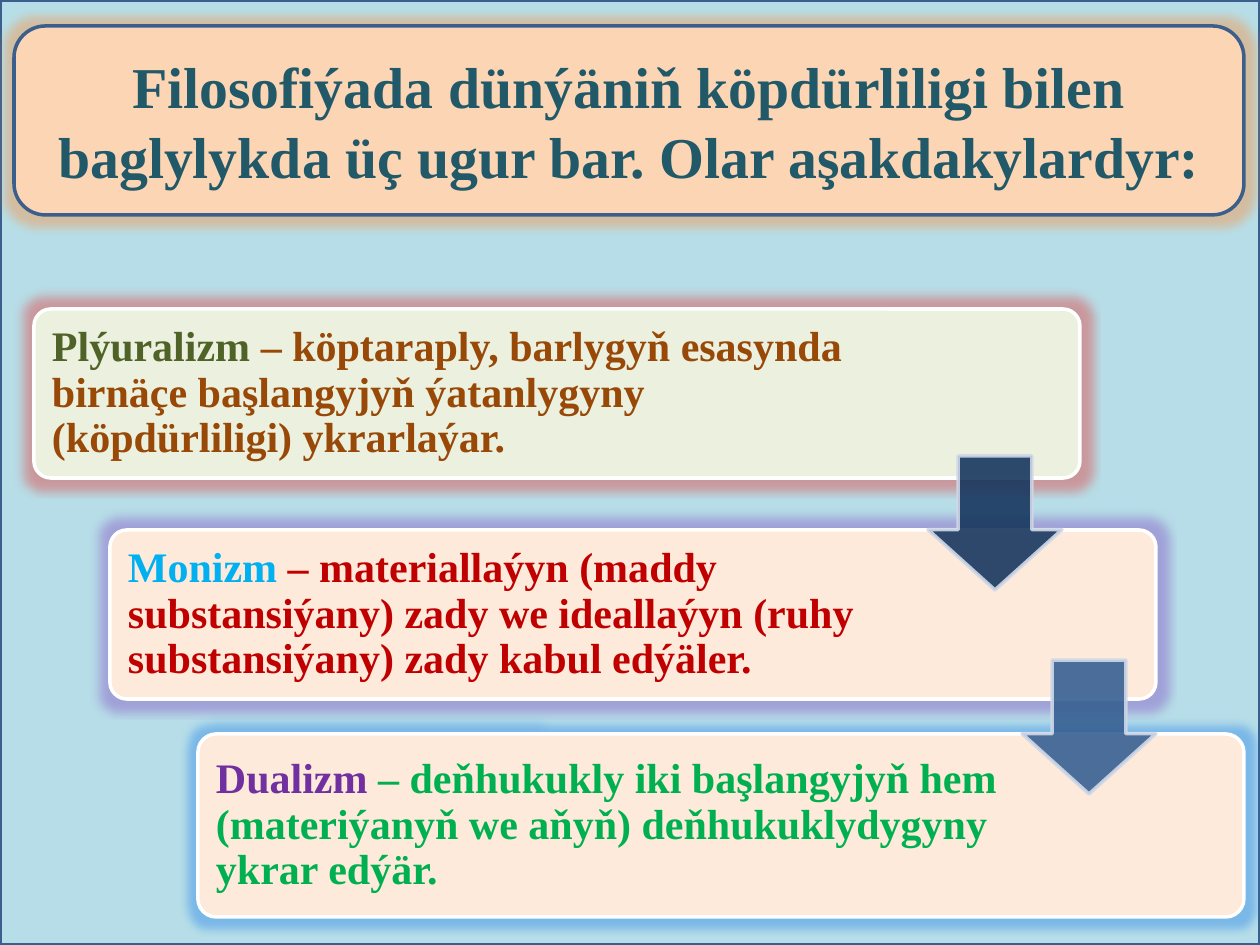
from lxml.etree import SubElement
from pptx import Presentation
from pptx.dml.color import RGBColor
from pptx.enum.shapes import MSO_SHAPE
from pptx.enum.text import MSO_ANCHOR, PP_ALIGN
from pptx.oxml.ns import qn
from pptx.util import Pt

PX = 914400 // 126
FONT = "Times New Roman"
HEX = {
    "sky": "B7DEE8", "edge": "3A5F8C", "peach": "FCD5B5", "teal": "215968",
    "white": "FFFFFF", "lime": "EBF1DE", "cream": "FDEADA", "olive": "4F6228",
    "brown": "984807", "cyan": "00B0F0", "red": "C00000", "plum": "7030A0",
    "green": "00B050", "navy": "17375E", "blue": "376092", "pale": "D0D8E8",
    "amber": "FF8A33", "rose": "E6302C", "mauve": "7F46BF", "azure": "1F7FE8",
}
TITLE = "Filosofiýada dünýäniň köpdürliligi bilen baglylykda üç ugur bar. Olar aşakdakylardyr:"
CARDS = [
    ((34, 309, 1046, 169), 827, "lime", "rose",
     [("Plýuralizm ", "olive"),
      ("– köptaraply, barlygyň esasynda birnäçe başlangyjyň ýatanlygyny "
       "(köpdürliligi) ykrarlaýar.", "brown")]),
    ((110, 530, 1046, 169), 810, "cream", "mauve",
     [("Monizm", "cyan"),
      (" – materiallaýyn (maddy substansiýany) zady we ideallaýyn (ruhy "
       "substansiýany) zady kabul edýäler.", "red")]),
    ((198, 734, 1046, 183), 809, "cream", "azure",
     [("Dualizm ", "plum"),
      ("– deňhukukly iki başlangyjyň hem (materiýanyň we aňyň) "
       "deňhukuklydygyny ykrar edýär.", "green")]),
]
ARROWS = [((928, 456, 134, 134), "navy"), ((1022, 660, 134, 134), "blue")]
PAD = 5
INSET = 13

deck = Presentation()
deck.slide_width, deck.slide_height = 1260 * PX, 945 * PX
slide = deck.slides.add_slide(deck.slide_layouts[6])


def tone(name):
    return RGBColor.from_string(HEX[name])


def draw(kind, box, fill, line, adjs=()):
    shape = slide.shapes.add_shape(kind, *[n * PX for n in box])
    shape.shadow.inherit = False
    shape.fill.solid()
    shape.fill.fore_color.rgb = tone(fill)
    shape.line.color.rgb = tone(line)
    shape.line.width = Pt(2)
    for i, value in enumerate(adjs):
        shape.adjustments[i] = value
    return shape


def fade(node, alpha):
    SubElement(node, qn("a:alpha"), val=str(alpha * 1000))


def glow(shape, name):
    effects = shape.element.spPr.find(qn("a:effectLst"))
    halo = SubElement(effects, qn("a:glow"), rad="139700")
    fade(SubElement(halo, qn("a:srgbClr"), val=HEX[name]), 40)


def write(frame, runs, size):
    frame.word_wrap = True
    frame.vertical_anchor = MSO_ANCHOR.MIDDLE
    para = frame.paragraphs[0]
    for text, name in runs:
        run = para.add_run()
        run.text = text
        run.font.name = FONT
        run.font.size = Pt(size)
        run.font.bold = True
        run.font.color.rgb = tone(name)
    return para


draw(MSO_SHAPE.RECTANGLE, (0, 0, 1260, 945), "sky", "edge")

for box, width, fill, halo, runs in CARDS:
    glow(draw(MSO_SHAPE.ROUNDED_RECTANGLE, box, fill, "white", [0.1]), halo)
    left, top, _, height = box
    area = (left + PAD, top + PAD, width, height - 2 * PAD)
    frame = slide.shapes.add_textbox(*[n * PX for n in area]).text_frame
    frame.margin_left = frame.margin_right = INSET * PX
    frame.margin_top = frame.margin_bottom = INSET * PX
    write(frame, runs, 24).line_spacing = 0.9

for box, fill in ARROWS:
    arrow = draw(MSO_SHAPE.DOWN_ARROW, box, fill, "pale", [0.55, 0.45])
    for node in arrow.element.spPr.iter(qn("a:srgbClr")):
        fade(node, 90)

banner = draw(MSO_SHAPE.ROUNDED_RECTANGLE, (14, 26, 1230, 189), "peach", "edge")
glow(banner, "amber")
write(banner.text_frame, [(TITLE, "teal")], 33).alignment = PP_ALIGN.CENTER

deck.save("out.pptx")
